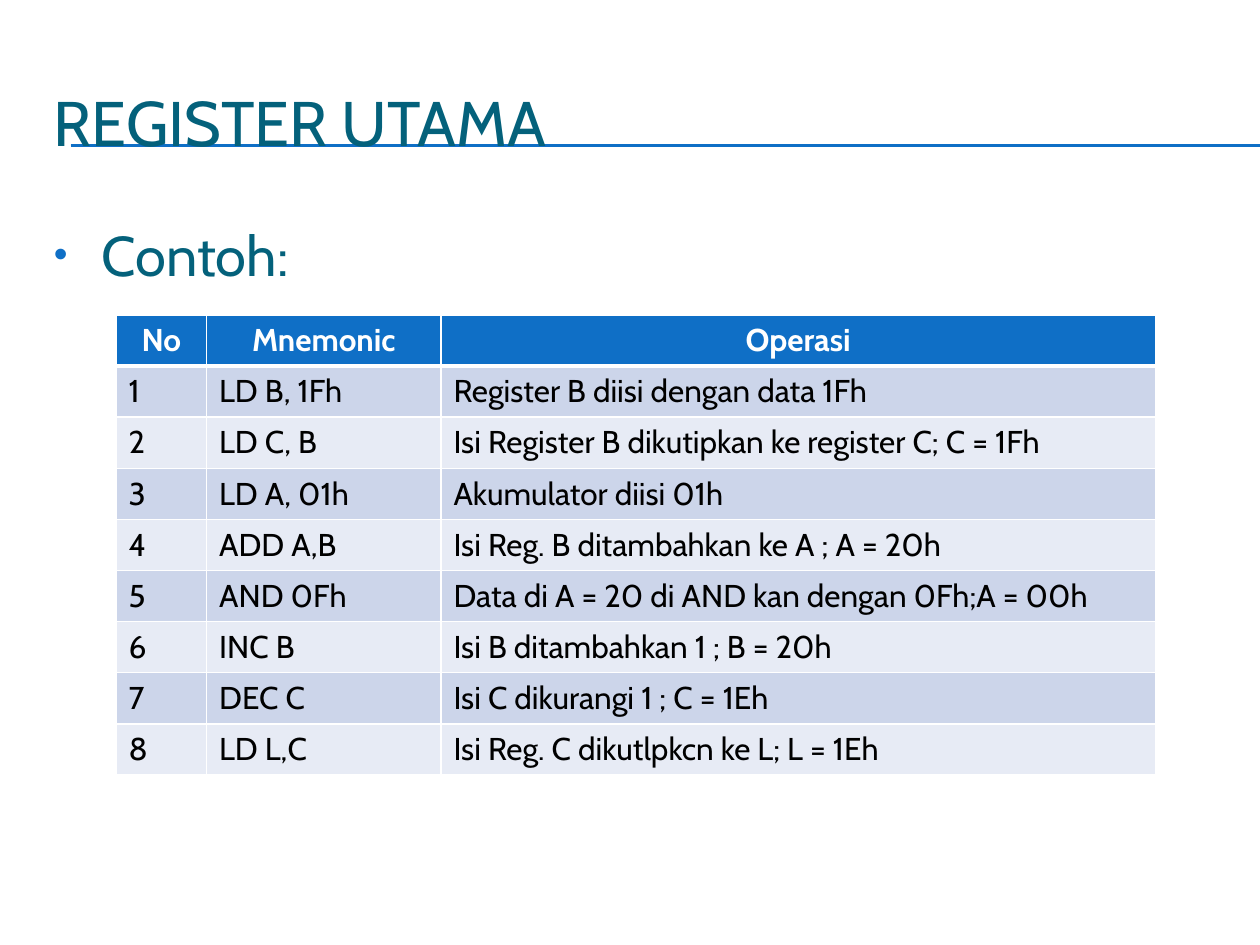
import pptx
import pptx.dml.color
import pptx.enum.shapes
import pptx.enum.text
import pptx.oxml
import pptx.oxml.ns
import pptx.oxml.xmlchemy
import pptx.util

Inches = pptx.util.Inches
Pt = pptx.util.Pt
Align = pptx.enum.text.PP_ALIGN
Anchor = pptx.enum.text.MSO_ANCHOR

TITLE = "REGISTER UTAMA"
LEAD = "Contoh:"
HEADER = ("No", "Mnemonic", "Operasi")
INSTRUCTIONS = [
    ("LD B, 1Fh", "Register B diisi dengan data 1Fh"),
    ("LD C, B", "Isi Register B dikutipkan ke register C; C = 1Fh"),
    ("LD A, 01h", "Akumulator diisi 01h"),
    ("ADD A,B", "Isi Reg. B ditambahkan ke A ; A = 20h"),
    ("AND 0Fh", "Data di A = 20 di AND kan dengan 0Fh;A = 00h"),
    ("INC B", "Isi B ditambahkan 1 ; B = 20h"),
    ("DEC C", "Isi C dikurangi 1 ; C = 1Eh"),
    ("LD L,C", "Isi Reg. C dikutlpkcn ke L; L = 1Eh"),
]
COLUMN_WIDTHS = (0.72, 1.86, 5.67)
TABLE_HEIGHT = 3.65
RULE_HEIGHTS = (1.15, 1.16)

THEME = {
    "font": "Cabin",
    "heading": "04617B",
    "accent": "0F6FC6",
    "white": "FFFFFF",
    "black": "000000",
    "bands": ("CCD5EA", "E7EBF5"),
    "title_size": 36,
    "lead_size": 32,
    "table_size": 18,
}


def rgb(name):
    return pptx.dml.color.RGBColor.from_string(name)


def add_node(parent, tag, **attributes):
    node = pptx.oxml.xmlchemy.OxmlElement(tag)
    for key, value in attributes.items():
        node.set(key, str(value))
    parent.append(node)
    return node


def add_span(para, text, size, color, bold=False):
    span = para.add_run()
    span.text = text
    span.font.name = THEME["font"]
    span.font.size = Pt(size)
    span.font.bold = bold
    span.font.color.rgb = rgb(color)


def add_text(page, text, top, height, size, anchor):
    box = page.shapes.add_textbox(Inches(0.33), Inches(top), Inches(9.5), Inches(height))
    box.text_frame.word_wrap = True
    box.text_frame.vertical_anchor = anchor
    para = box.text_frame.paragraphs[0]
    add_span(para, text, size, THEME["heading"])
    return para


def add_bullet(para):
    properties = para._p.get_or_add_pPr()
    properties.set("marL", str(Inches(0.38)))
    properties.set("indent", str(-Inches(0.38)))
    color = add_node(properties, "a:buClr")
    add_node(color, "a:srgbClr", val=THEME["accent"])
    add_node(properties, "a:buSzPct", val=70000)
    add_node(properties, "a:buFont", typeface="Arial")
    add_node(properties, "a:buChar", char="•")


def add_rule(page, height):
    rule = page.shapes.add_connector(
        pptx.enum.shapes.MSO_CONNECTOR.STRAIGHT,
        Inches(0.56), Inches(height), Inches(10), Inches(height),
    )
    rule.line.color.rgb = rgb(THEME["accent"])
    rule.line.width = Pt(0.75)
    add_node(rule._element.spPr, "a:effectLst")


def set_borders(cell, widths):
    properties = cell._tc.get_or_add_tcPr()
    for position, (side, width) in enumerate(widths.items()):
        border = pptx.oxml.xmlchemy.OxmlElement("a:ln" + side)
        border.set("w", str(Pt(width)))
        fill = add_node(border, "a:solidFill")
        add_node(fill, "a:srgbClr", val=THEME["white"])
        properties.insert(position, border)


def add_instruction_table(page):
    rows = [HEADER]
    rows += [(str(number), *entry) for number, entry in enumerate(INSTRUCTIONS, 1)]
    table = page.shapes.add_table(
        len(rows), len(HEADER), Inches(0.92), Inches(2.5),
        Inches(sum(COLUMN_WIDTHS)), Inches(TABLE_HEIGHT),
    ).table
    for column, width in zip(table.columns, COLUMN_WIDTHS):
        column.width = Inches(width)
    for index, row in enumerate(rows):
        is_header = index == 0
        fill = THEME["accent"] if is_header else THEME["bands"][(index - 1) % 2]
        color = THEME["white"] if is_header else THEME["black"]
        top = 3 if index == 1 else 1
        bottom = 3 if is_header else 1
        for position, text in enumerate(row):
            cell = table.cell(index, position)
            cell.fill.solid()
            cell.fill.fore_color.rgb = rgb(fill)
            set_borders(cell, {"L": 1, "R": 1, "T": top, "B": bottom})
            para = cell.text_frame.paragraphs[0]
            para.alignment = Align.CENTER if is_header else Align.LEFT
            add_span(para, text, THEME["table_size"], color, is_header)


def main():
    deck = pptx.Presentation()
    deck.slide_width = Inches(10)
    deck.slide_height = Inches(7.5)
    page = deck.slides.add_slide(deck.slide_layouts[6])
    for height in RULE_HEIGHTS:
        add_rule(page, height)
    add_text(page, TITLE, 0.5, 0.92, THEME["title_size"], Anchor.MIDDLE)
    lead = add_text(page, LEAD, 1.7, 4.95, THEME["lead_size"], Anchor.TOP)
    add_bullet(lead)
    add_instruction_table(page)
    deck.save("out.pptx")


if __name__ == "__main__":
    main()
